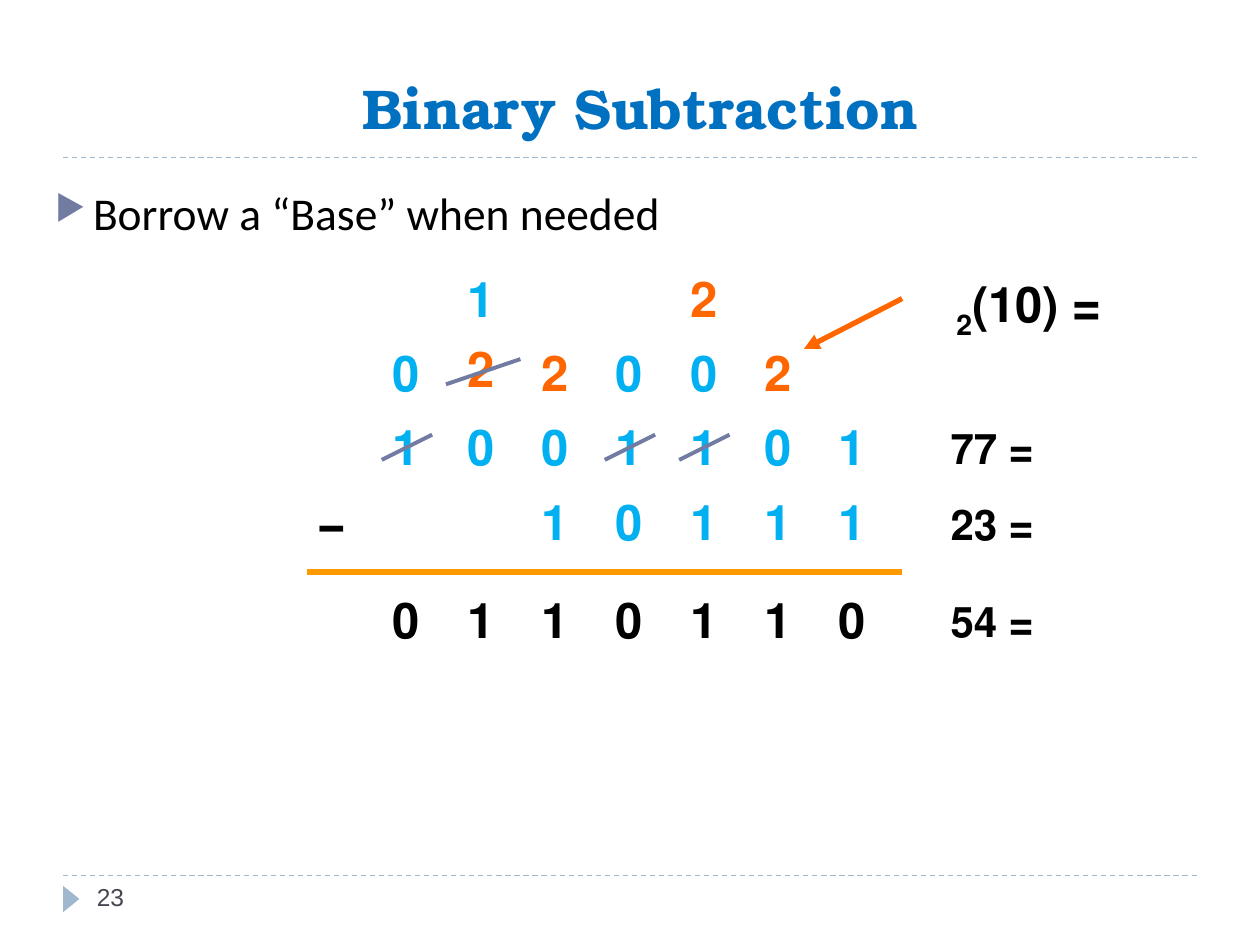
from lxml.etree import SubElement
from pptx import Presentation
from pptx.dml.color import RGBColor
from pptx.enum.dml import MSO_LINE
from pptx.enum.shapes import MSO_CONNECTOR, MSO_SHAPE
from pptx.enum.text import MSO_ANCHOR, PP_ALIGN
from pptx.oxml.ns import qn
from pptx.util import Emu, Pt

SCALE = 9144
BLACK, CYAN, ORANGE = "000000", "00B0F0", "FF6600"
SLATE, PALE, GOLD = "727CA3", "9FB8CD", "FF9900"
GRID_LEFT, PITCH, DIGIT_WIDTH, DIGIT_HEIGHT = 244, 59, 39, 42
CARRY, BORROW, MINUEND, SUBTRAHEND, RESULT = 218, 277, 336, 395, 473


def px(length):
    return Emu(length * SCALE)


def color(value):
    return RGBColor.from_string(value)


class SlideBuilder:
    def __init__(self, page, font="Arial"):
        self.page = page
        self.font = font

    def style(self, paragraph, size, ink, bold=False, font=None):
        paragraph.font.name = font or self.font
        paragraph.font.size = Pt(size)
        paragraph.font.bold = bold
        paragraph.font.color.rgb = color(ink)

    def text(self, words, left, top, width, height, size, ink, bold=False,
             font=None, align=PP_ALIGN.LEFT, anchor=MSO_ANCHOR.TOP):
        box = self.page.shapes.add_textbox(*map(px, (left, top, width, height)))
        frame = box.text_frame
        frame.word_wrap = True
        frame.vertical_anchor = anchor
        paragraph = frame.paragraphs[0]
        paragraph.text = words
        paragraph.alignment = align
        self.style(paragraph, size, ink, bold, font)
        return frame

    def right_to_left(self, paragraph, spacing):
        paragraph.line_spacing = spacing
        paragraph._p.get_or_add_pPr().set("rtl", "1")

    def no_margins(self, frame):
        frame.margin_left = frame.margin_right = 0
        frame.margin_top = frame.margin_bottom = 0

    def digit(self, symbol, column, top, ink):
        frame = self.text(symbol, GRID_LEFT + column * PITCH, top, DIGIT_WIDTH,
                          DIGIT_HEIGHT, 28, ink, True, align=PP_ALIGN.CENTER)
        self.no_margins(frame)
        self.right_to_left(frame.paragraphs[0], 0.9)

    def value(self, lines, top, height):
        frame = self.text(lines[0], 736, top, 94, height, 24, BLACK, True,
                          align=PP_ALIGN.RIGHT)
        self.right_to_left(frame.paragraphs[0], 0.87)
        for words in lines[1:]:
            paragraph = frame.add_paragraph()
            paragraph.text = words
            paragraph.alignment = PP_ALIGN.RIGHT
            paragraph.space_before = Pt(20)
            self.style(paragraph, 24, BLACK, True)
            self.right_to_left(paragraph, 0.8)

    def base_value(self, words, subscript):
        frame = self.text(words, 736, CARRY, 138, DIGIT_HEIGHT, 28, BLACK, True,
                          align=PP_ALIGN.RIGHT)
        self.no_margins(frame)
        paragraph = frame.paragraphs[0]
        self.right_to_left(paragraph, 0.9)
        span = paragraph.add_run()
        span.text = subscript
        span.font._element.set("baseline", "-25000")

    def bullet(self, words):
        frame = self.text(words, 34, 142, 937, 87, 26, BLACK, font="Calibri")
        paragraph = frame.paragraphs[0]
        paragraph.space_before = Pt(6)
        properties = paragraph._p.get_or_add_pPr()
        properties.set("marL", str(px(30)))
        properties.set("indent", str(px(-30)))
        marker = SubElement(properties, qn("a:buClr"))
        SubElement(marker, qn("a:srgbClr"), val=SLATE)
        SubElement(properties, qn("a:buSzPct"), val="76000")
        SubElement(properties, qn("a:buChar"), char="▶")
        default = properties.find(qn("a:defRPr"))
        if default is not None:
            properties.append(default)

    def line(self, start, end, ink, weight, dashed=False, arrow=False):
        connector = self.page.shapes.add_connector(
            MSO_CONNECTOR.STRAIGHT, *map(px, (*start, *end)))
        connector.line.color.rgb = color(ink)
        connector.line.width = Pt(weight)
        if dashed:
            connector.line.dash_style = MSO_LINE.DASH
        if arrow:
            SubElement(connector.line._get_or_add_ln(), qn("a:tailEnd"),
                       type="triangle")
        SubElement(connector._element.spPr, qn("a:effectLst"))

    def triangle(self, left, top, width, height, ink):
        shape = self.page.shapes.add_shape(
            MSO_SHAPE.ISOSCELES_TRIANGLE, *map(px, (left, top, width, height)))
        shape.rotation = 90
        shape.shadow.inherit = False
        shape.fill.solid()
        shape.fill.fore_color.rgb = color(ink)
        shape.line.fill.background()


def main():
    deck = Presentation()
    deck.slide_width, deck.slide_height = px(1000), px(750)
    slide = SlideBuilder(deck.slides.add_slide(deck.slide_layouts[6]))

    for rule_top in (695, 125):
        slide.line((50, rule_top), (950, rule_top), PALE, 0.75, dashed=True)
    slide.triangle(46, 707, 21, 13, PALE)
    slide.text("Binary Subtraction", 264, 21, 489, 96, 32, "0070C0", True,
               "TeX Gyre Bonum", PP_ALIGN.CENTER, MSO_ANCHOR.BOTTOM)
    slide.bullet("Borrow a “Base” when needed")

    digit_groups = [
        (CARRY, CYAN, {2: "1"}),
        (CARRY, ORANGE, {5: "2"}),
        (BORROW, CYAN, {1: "0", 4: "0", 5: "0"}),
        (BORROW - 3, ORANGE, {2: "2"}),
        (BORROW, ORANGE, {3: "2", 6: "2"}),
        (MINUEND, CYAN, dict(enumerate("1001101", 1))),
        (SUBTRAHEND, BLACK, {0: "−"}),
        (SUBTRAHEND, CYAN, dict(enumerate("10111", 3))),
        (RESULT, BLACK, dict(enumerate("0110110", 1))),
    ]
    for top, ink, digits in digit_groups:
        for column, symbol in digits.items():
            slide.digit(symbol, column, top, ink)

    for column in (1, 4, 5):
        left = GRID_LEFT + column * PITCH
        slide.line((left, 365), (left + 40, 345), SLATE, 2.25)
    slide.line((354, 305), (413, 285), SLATE, 2.25)
    slide.line((716, 454), (GRID_LEFT, 454), GOLD, 3)
    slide.line((716, 237), (638, 277), ORANGE, 3, arrow=True)

    slide.base_value("= (10)", "2")
    slide.value(["= 77", "= 23"], MINUEND, 107)
    slide.value(["= 54"], RESULT, 45)
    slide.text("23", 67, 695, 217, 40, 14, "464653")

    deck.save("out.pptx")


if __name__ == "__main__":
    main()
